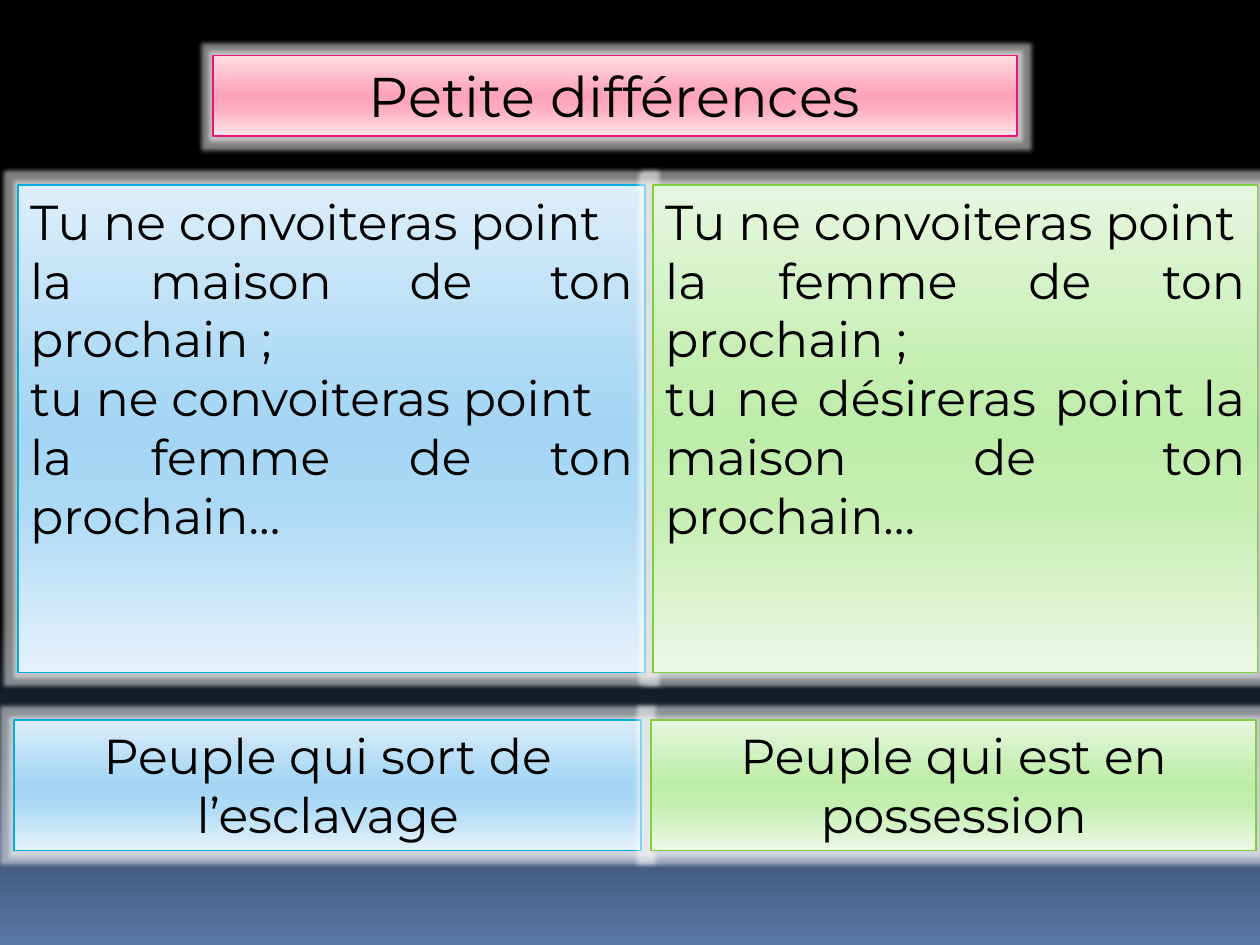
from lxml.etree import SubElement
from pptx import Presentation
from pptx.dml.color import RGBColor
from pptx.enum.shapes import MSO_SHAPE
from pptx.enum.text import MSO_ANCHOR, PP_ALIGN
from pptx.oxml.ns import qn
from pptx.util import Cm, Pt

FONT = "Montserrat"
COLORS = {
    "text": "000000",
    "glow": "FFFFFF",
    "blue": "00ADDC",
    "green": "7FD13B",
    "pink": "EA157A",
}
PANEL_STOPS = (0, 40, 50, 65, 100)
GRADIENTS = {
    "blue": ("DEEEFA", "ACD9F5", "A4D6F4", "ACD9F5", "E5F2FB"),
    "green": ("E6F7E0", "C4EEB0", "BEEDA9", "C4EEB0", "ECF8E6"),
    "pink": ("FDDEE5", "FDABC0", "FDA3BB", "FDABC0", "FDE5EB"),
    "background": ("000000", "000000", "5B77A8"),
}


def add_color(parent, color):
    return SubElement(parent, qn("a:srgbClr"), val=color)


def fill_gradient(owner, fill, positions, colors):
    fill.gradient()
    fill.gradient_angle = 270
    stops = owner.element.find(".//" + qn("a:gsLst"))
    for stop in list(stops):
        stops.remove(stop)
    for position, color in zip(positions, colors):
        add_color(SubElement(stops, qn("a:gs"), pos=str(position * 1000)), color)


def add_glow(sp):
    sp.shadow.inherit = False
    effects = sp.element.spPr.find(qn("a:effectLst"))
    glow = SubElement(effects, qn("a:glow"), rad=str(Pt(5)))
    SubElement(add_color(glow, COLORS["glow"]), qn("a:alpha"), val="50000")


def add_panel(s, box, theme, lines, size=28, align=PP_ALIGN.CENTER):
    sp = s.shapes.add_shape(MSO_SHAPE.RECTANGLE, *map(Cm, box))
    fill_gradient(sp, sp.fill, PANEL_STOPS, GRADIENTS[theme])
    sp.line.color.rgb = RGBColor.from_string(COLORS[theme])
    sp.line.width = Pt(0.94)
    add_glow(sp)
    tf = sp.text_frame
    tf.word_wrap = True
    tf.vertical_anchor = MSO_ANCHOR.TOP
    tf.text = "\n".join(lines)
    for p in tf.paragraphs:
        p.alignment = align
        for r in p.runs:
            r.font.name = FONT
            r.font.size = Pt(size)
            r.font.color.rgb = RGBColor.from_string(COLORS["text"])


def add_column(s, left, top, width, theme, verses, people, offset):
    add_panel(s, (left, top, width, 9.83), theme, verses, align=PP_ALIGN.JUSTIFY)
    add_panel(s, (left - offset, top + 10.78, width, 2.64), theme, [people])


def main():
    prs = Presentation()
    prs.slide_width, prs.slide_height = Cm(25.4), Cm(19.05)
    s = prs.slides.add_slide(prs.slide_layouts[6])
    fill_gradient(s, s.background.fill, (0, 65, 100), GRADIENTS["background"])

    add_column(s, 0.36, 3.73, 12.65, "blue", [
        "Tu ne convoiteras point",
        "la maison de ton prochain ;",
        "tu ne convoiteras point",
        "la femme de ton prochain…",
    ], "Peuple qui sort de l’esclavage", 0.08)
    add_column(s, 13.16, 3.73, 12.19, "green", [
        "Tu ne convoiteras point",
        "la femme de ton prochain ;",
        "tu ne désireras point la maison de ton prochain…",
    ], "Peuple qui est en possession", 0.03)
    add_panel(s, (4.29, 1.12, 16.21, 1.63), "pink", ["Petite différences"], size=32)

    prs.save("out.pptx")


if __name__ == "__main__":
    main()
